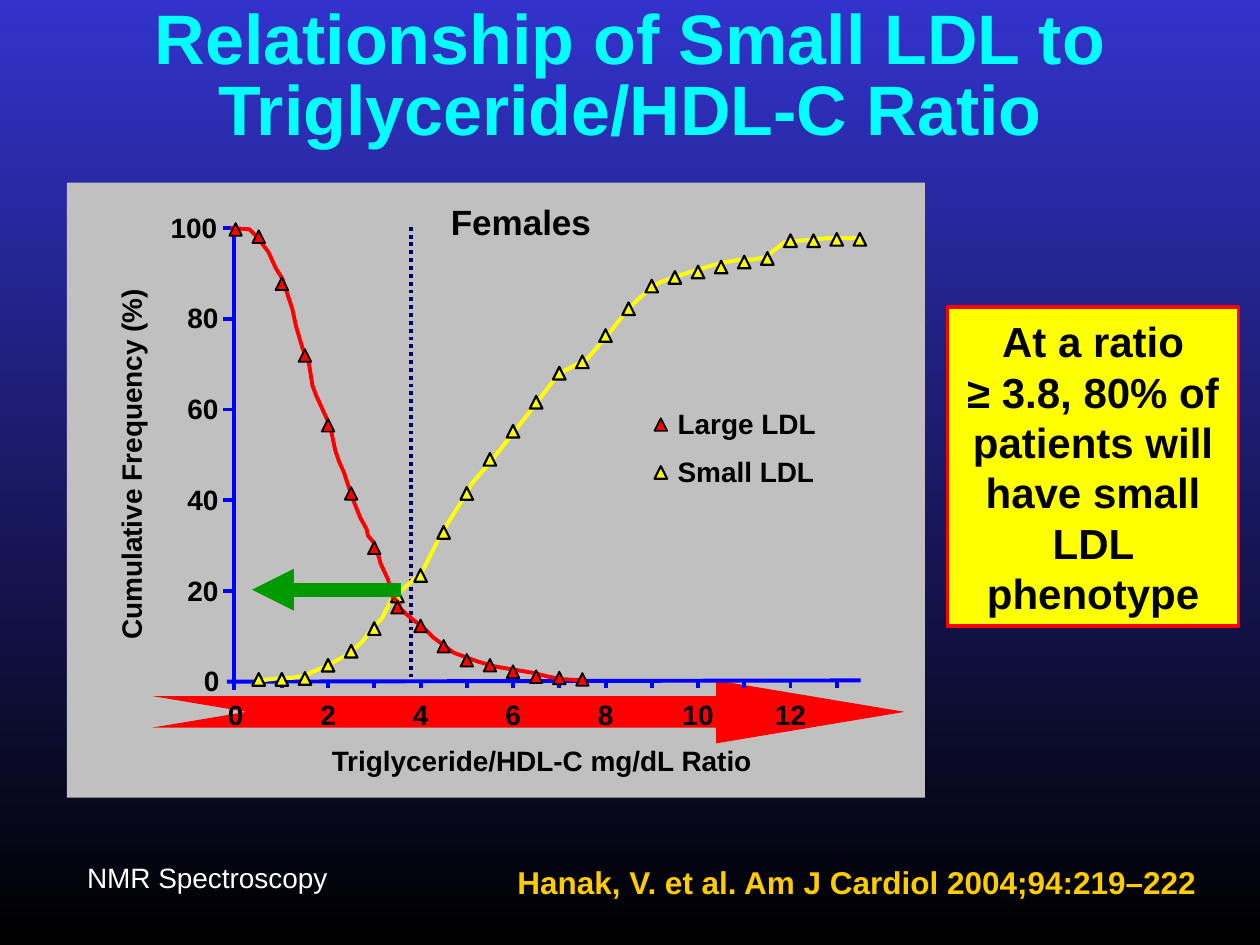
from dataclasses import dataclass

from lxml.etree import SubElement
from pptx import Presentation
from pptx.dml.color import RGBColor
from pptx.enum.dml import MSO_LINE
from pptx.enum.shapes import MSO_CONNECTOR, MSO_SHAPE
from pptx.enum.text import MSO_ANCHOR, PP_ALIGN
from pptx.oxml.ns import qn
from pptx.util import Inches, Pt

COLUMNS, ROWS = 100, 75


@dataclass(frozen=True)
class Theme:
    font: str = "Arial"
    sky: str = "3333CC"
    black: str = "000000"
    white: str = "FFFFFF"
    title: str = "00FFFF"
    citation: str = "FFCC00"
    panel: str = "C0C0C0"
    axis: str = "0000FF"
    threshold: str = "000066"
    large: str = "FF0000"
    small: str = "FFFF00"
    pointer: str = "009900"
    title_size: int = 40
    callout_size: int = 24
    heading_size: int = 20
    citation_size: int = 18
    label_size: int = 16
    line: float = 2.25


THEME = Theme()

# Frequencies in percent, one for each half step of the ratio
LARGE_LDL = [99.7, 98.1, 87.7, 71.9, 56.5, 41.5, 29.5, 16.4, 12.3, 7.8, 4.7, 3.6, 2.2, 1.1, 0.8, 0.5]
SMALL_LDL = [0.5, 0.5, 0.7, 3.6, 6.7, 11.7, 18.9, 23.4, 32.9, 41.5, 49, 55.2, 61.6, 68, 70.5, 76.3,
             82.2, 87.2, 89.1, 90.3, 91.4, 92.5, 93.3, 97.2, 97.2, 97.5, 97.5]

# Smoothed curves as (column, row) points
LARGE_CURVE = [
    (18.3, 18.1), (19.8, 18.2), (20.4, 18.8), (21.3, 20), (21.9, 21.3), (22.4, 22.1), (23.2, 24.5),
    (23.5, 25.9), (24, 27.6), (24.5, 28.7), (24.8, 30.6), (25.1, 31.4), (26.2, 33.8), (26.6, 35.7),
    (26.9, 36.6), (27.3, 37.5), (28, 39.6), (28.6, 41.1), (29.1, 42), (29.2, 42.5), (29.7, 43.1),
    (30.1, 44.3), (30.2, 44.7), (30.8, 46), (31.1, 47.3), (31.6, 47.8), (31.8, 48.3), (32.2, 48.7),
    (32.8, 49.2), (33.6, 49.8), (34.4, 50.6), (34.8, 50.9), (36, 51.8), (37.9, 52.5), (39.3, 52.9),
    (41.1, 53.2), (42.3, 53.4), (43.5, 53.7), (44.5, 53.9), (46.5, 54)]
SMALL_CURVE = [
    (20.7, 54), (22.4, 53.8), (23.2, 53.8), (24.2, 53.6), (26, 52.8), (27.5, 52), (28.7, 51),
    (29.5, 49.9), (30.3, 49.1), (31.1, 47.5), (31.7, 47), (33.5, 45.4), (35, 42.4), (37, 39.2),
    (37.5, 38.3), (38.9, 36.7), (40.7, 34.4), (42.5, 32.1), (44.3, 29.7), (45.8, 28.9), (46.6, 28.5),
    (47.6, 27.3), (48.3, 26.5), (49.8, 24.6), (50.6, 23.8), (51.6, 22.9), (52.4, 22.4), (53.2, 22.1),
    (54.1, 21.8), (56.4, 21.1), (57.1, 20.9), (58.8, 20.6), (59.8, 20.6), (60.8, 20.4), (61.9, 19.5),
    (62.3, 19.2), (65.7, 18.9), (68.5, 18.9)]


def ratio_column(ratio):
    return 18.7 + 3.67 * ratio


def frequency_row(frequency):
    return 54.1 - 0.36 * frequency


def write_text(frame, text, size=THEME.label_size, color=THEME.black, bold=True,
               align=PP_ALIGN.CENTER, anchor=MSO_ANCHOR.TOP, spacing=None, wrap=True):
    frame.word_wrap = wrap
    frame.vertical_anchor = anchor
    paragraph = frame.paragraphs[0]
    paragraph.text = text
    paragraph.alignment = align
    paragraph.line_spacing = spacing
    font = paragraph.font
    font.name, font.size, font.bold = THEME.font, Pt(size), bold
    font.color.rgb = RGBColor.from_string(color)


class SlideBuilder:
    """Draws on one slide, with lengths in grid columns and rows."""

    def __init__(self, presentation, theme):
        self.theme = theme
        self.cell_width = presentation.slide_width / COLUMNS
        self.cell_height = presentation.slide_height / ROWS
        self.slide = presentation.slides.add_slide(presentation.slide_layouts[6])
        self.shapes = self.slide.shapes

    def place(self, column, row):
        return round(column * self.cell_width), round(row * self.cell_height)

    def background(self, *colors):
        fill = self.slide.background.fill
        fill.gradient()
        fill.gradient_angle = 270
        for position, (stop, color) in enumerate(zip(fill.gradient_stops, colors)):
            stop.position = position
            stop.color.rgb = RGBColor.from_string(color)

    def outline(self, line, color, width, dash=None):
        line.color.rgb = RGBColor.from_string(color)
        line.width = Pt(width)
        if dash:
            line.dash_style = dash

    def shape(self, kind, column, row, columns, rows, fill, line=None, width=THEME.line):
        shape = self.shapes.add_shape(kind, *self.place(column, row), *self.place(columns, rows))
        shape.shadow.inherit = False
        shape.fill.solid()
        shape.fill.fore_color.rgb = RGBColor.from_string(fill)
        if line:
            self.outline(shape.line, line, width)
        else:
            shape.line.fill.background()
        return shape

    def text(self, text, column, row, columns, rows, rotation=0, **text_format):
        box = self.shapes.add_textbox(*self.place(column, row), *self.place(columns, rows))
        box.rotation = rotation
        write_text(box.text_frame, text, **text_format)

    def line(self, start, end, color, width=THEME.line, dash=None, arrow=False):
        connector = self.shapes.add_connector(
            MSO_CONNECTOR.STRAIGHT, *self.place(*start), *self.place(*end))
        self.outline(connector.line, color, width, dash)
        if arrow:
            SubElement(connector.line._get_or_add_ln(), qn("a:tailEnd"), type="triangle")
        SubElement(connector._element.spPr, qn("a:effectLst"))

    def curve(self, points, color):
        start, *others = [self.place(*point) for point in points]
        builder = self.shapes.build_freeform(*start)
        builder.add_line_segments(others, close=False)
        shape = builder.convert_to_shape()
        shape.shadow.inherit = False
        shape.fill.background()
        self.outline(shape.line, color, self.theme.line)

    def marker(self, column, row, color, width):
        """Draw a triangle centred on the point."""
        self.shape(MSO_SHAPE.ISOSCELES_TRIANGLE, column - 0.5, row - 0.5, 1, 1,
                   color, self.theme.black, width)

    def series(self, curve, frequencies, first_ratio, color, width):
        self.curve(curve, color)
        for index, frequency in enumerate(frequencies):
            self.marker(ratio_column(first_ratio + index / 2), frequency_row(frequency), color, width)

    def axes(self):
        color = self.theme.axis
        self.line((18.6, 17.9), (18.6, 54.8), color)
        self.line((18, 54.1), (68.3, 54), color)
        for frequency in range(20, 101, 20):
            row = frequency_row(frequency)
            self.line((17.7, row), (18.5, row), color)
        for ratio in range(1, 14):
            column = ratio_column(ratio)
            self.line((column, 54.1), (column, 54.6), color)

    def axis_labels(self):
        for ratio in range(0, 13, 2):
            self.text(str(ratio), ratio_column(ratio) - 2.35, 54.85, 4.7, 3.7)
        for frequency in range(0, 101, 20):
            label = str(frequency)
            columns = 2.4 + 1.4 * len(label)
            self.text(label, 18.7 - columns, frequency_row(frequency) - 1.9, columns, 3.7)


def main():
    presentation = Presentation()
    presentation.slide_width, presentation.slide_height = Inches(10), Inches(7.5)
    theme = THEME
    builder = SlideBuilder(presentation, theme)
    builder.background(theme.sky, theme.black)

    builder.shape(MSO_SHAPE.RECTANGLE, 5.3, 14.5, 68.1, 48.8, theme.panel)
    ratio_arrow = builder.shape(MSO_SHAPE.NOTCHED_RIGHT_ARROW, 12.1, 54, 59.7, 5, theme.large)
    ratio_arrow.adjustments[1] = 2.99
    builder.text("Relationship of Small LDL to Triglyceride/HDL-C Ratio", 0, 0, 100, 12.5,
                 size=theme.title_size, color=theme.title, anchor=MSO_ANCHOR.MIDDLE, spacing=0.85)
    builder.text("Hanak, V. et al. Am J Cardiol 2004;94:219–222", 39.9, 68, 56.2, 4,
                 size=theme.citation_size, color=theme.citation, wrap=False)

    builder.line((32.6, 18), (32.6, 54), theme.threshold, dash=MSO_LINE.ROUND_DOT)
    builder.axes()
    builder.series(SMALL_CURVE, SMALL_LDL, 0.5, theme.small, 1.25)
    builder.series(LARGE_CURVE, LARGE_LDL, 0, theme.large, 1)
    builder.axis_labels()
    builder.text("Triglyceride/HDL-C mg/dL Ratio", 24.7, 58.5, 36.6, 3.7)
    builder.text("Cumulative Frequency (%)", -5.8, 33.7, 32.4, 3.7, rotation=270, align=PP_ALIGN.LEFT)
    builder.text("Females", 34, 15.4, 14.7, 4.3, size=theme.heading_size)
    for label, row, color, width in (("Large LDL", 33.7, theme.large, 1),
                                     ("Small LDL", 37.5, theme.small, 1.25)):
        builder.marker(52.45, row, color, width)
        builder.text(label, 52.8, row - 1.9, 20.6, 3.7, align=PP_ALIGN.LEFT)

    builder.text("NMR Spectroscopy", 2.5, 67.8, 27.9, 3.7, color=theme.white, bold=False)
    builder.line((31.8, 46.8), (20, 46.8), theme.pointer, width=8, arrow=True)
    callout = builder.shape(MSO_SHAPE.RECTANGLE, 75.2, 24.4, 23.1, 25.3, theme.small, theme.large)
    write_text(callout.text_frame, "At a ratio\v≥ 3.8, 80% of patients will have small LDL phenotype",
               size=theme.callout_size, anchor=MSO_ANCHOR.MIDDLE)
    presentation.save("out.pptx")


if __name__ == "__main__":
    main()
